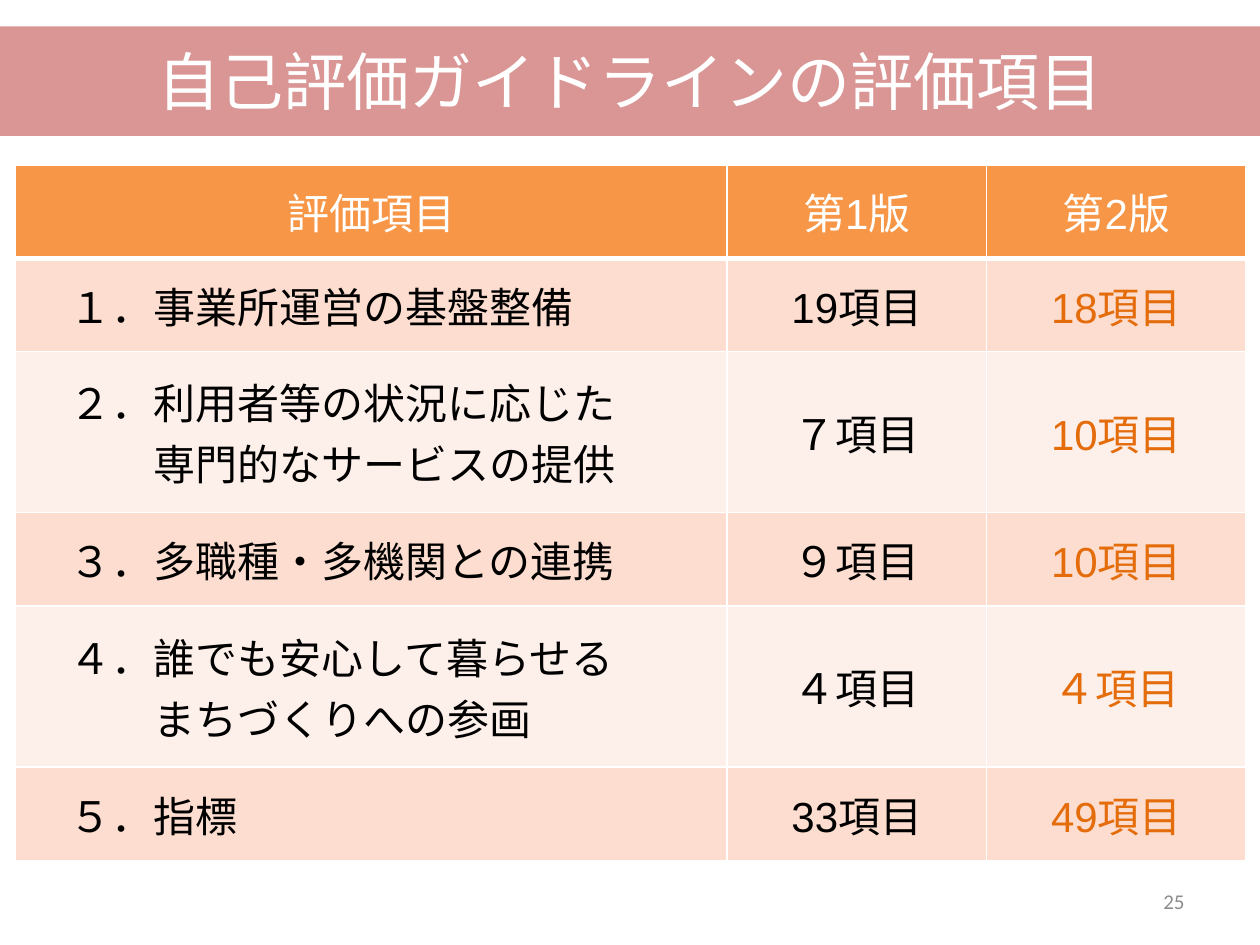
"""Build the slide comparing evaluation items in two guideline editions."""
from pptx import Presentation
from pptx import util as u
from pptx.dml.color import RGBColor
from pptx.enum import shapes, text
from pptx.oxml import ns
from lxml import etree

TITLE = "自己評価ガイドラインの評価項目"
PAGE_NUMBER = "25"
HEADER = ["評価項目", "第1版", "第2版"]
ROWS = [
    (["１．事業所運営の基盤整備"], "19項目", "18項目"),
    (["２．利用者等の状況に応じた", "専門的なサービスの提供"], "７項目", "10項目"),
    (["３．多職種・多機関との連携"], "９項目", "10項目"),
    (["４．誰でも安心して暮らせる", "まちづくりへの参画"], "４項目", "４項目"),
    (["５．指標"], "33項目", "49項目"),
]
COLUMN_WIDTHS = [5.65, 2.06, 2.06]
ROW_HEIGHTS = {1: 0.74, 2: 1.28}

WHITE = RGBColor(0xFF, 0xFF, 0xFF)
BLACK = RGBColor(0, 0, 0)
ROSE = RGBColor(0xD9, 0x96, 0x94)
ORANGE = RGBColor(0xF7, 0x96, 0x46)
DARK_ORANGE = RGBColor(0xE4, 0x6C, 0x0A)
GRAY = RGBColor(0x8C, 0x8C, 0x8C)
BANDS = [RGBColor(0xFC, 0xDD, 0xCF), RGBColor(0xFD, 0xEF, 0xE9)]
CENTER, LEFT, RIGHT = text.PP_ALIGN.CENTER, text.PP_ALIGN.LEFT, text.PP_ALIGN.RIGHT


def write(frame, lines, size, font, color, align):
    for index, line in enumerate(lines):
        para = frame.paragraphs[0] if index == 0 else frame.add_paragraph()
        para.alignment = align
        span = para.add_run()
        span.text = line
        span.font.size = u.Pt(size)
        span.font.name = font
        span.font.color.rgb = color


def hang(frame):
    for index, para in enumerate(frame.paragraphs):
        properties = para._p.get_or_add_pPr()
        properties.set("marL", str(u.Inches(1)))
        properties.set("indent", str(u.Inches(0 if index else -0.67)))


def set_borders(cell, top, bottom):
    properties = cell._tc.get_or_add_tcPr()
    for side, width in zip("LRTB", (1, 1, top, bottom)):
        line = etree.SubElement(properties, ns.qn(f"a:ln{side}"), w=str(u.Pt(width)))
        fill = etree.SubElement(line, ns.qn("a:solidFill"))
        etree.SubElement(fill, ns.qn("a:srgbClr"), val=str(WHITE))


def fill_cell(cell, lines, color, align, background, top=1, bottom=1):
    set_borders(cell, top, bottom)
    cell.fill.solid()
    cell.fill.fore_color.rgb = background
    cell.vertical_anchor = text.MSO_ANCHOR.MIDDLE
    write(cell.text_frame, lines, 24, "Arial", color, align)


def add_band(page):
    band = page.shapes.add_shape(
        shapes.MSO_SHAPE.RECTANGLE, 0, u.Inches(0.21), u.Inches(10), u.Inches(0.87))
    band.shadow.inherit = False
    band.fill.solid()
    band.fill.fore_color.rgb = ROSE
    band.line.fill.background()


def add_title(page):
    title = page.shapes.title
    title.left, title.top = 0, u.Inches(0.29)
    title.width, title.height = u.Inches(10), u.Inches(0.87)
    title.text_frame.auto_size = text.MSO_AUTO_SIZE.NONE
    title.text_frame.vertical_anchor = text.MSO_ANCHOR.TOP
    write(title.text_frame, [TITLE], 36, "Calibri", WHITE, CENTER)
    page.shapes._spTree.append(title._element)


def add_items(page):
    heights = [ROW_HEIGHTS[1]] + [ROW_HEIGHTS[len(row[0])] for row in ROWS]
    table = page.shapes.add_table(
        len(heights), len(COLUMN_WIDTHS), u.Inches(0.12), u.Inches(1.31),
        u.Inches(sum(COLUMN_WIDTHS)), u.Inches(sum(heights))).table
    for column, width in zip(table.columns, COLUMN_WIDTHS):
        column.width = u.Inches(width)
    for row, height in zip(table.rows, heights):
        row.height = u.Inches(height)
    for column, label in enumerate(HEADER):
        fill_cell(table.cell(0, column), [label], WHITE, CENTER, ORANGE, bottom=3)
    for number, (item, first, second) in enumerate(ROWS, 1):
        background = BANDS[(number - 1) % 2]
        top = 3 if number == 1 else 1
        cells = [(item, BLACK, LEFT), ([first], BLACK, CENTER), ([second], DARK_ORANGE, CENTER)]
        for column, (lines, color, align) in enumerate(cells):
            fill_cell(table.cell(number, column), lines, color, align, background, top)
        hang(table.cell(number, 0).text_frame)


def add_page_number(page):
    box = page.shapes.add_textbox(u.Inches(7.17), u.Inches(6.95), u.Inches(2.33), u.Inches(0.4))
    box.text_frame.word_wrap = True
    box.text_frame.vertical_anchor = text.MSO_ANCHOR.MIDDLE
    write(box.text_frame, [PAGE_NUMBER], 12, "Calibri", GRAY, RIGHT)


def main():
    deck = Presentation()
    deck.slide_width, deck.slide_height = u.Inches(10), u.Inches(7.5)
    page = deck.slides.add_slide(deck.slide_layouts[5])
    add_band(page)
    add_items(page)
    add_page_number(page)
    add_title(page)
    deck.save("out.pptx")


if __name__ == "__main__":
    main()
